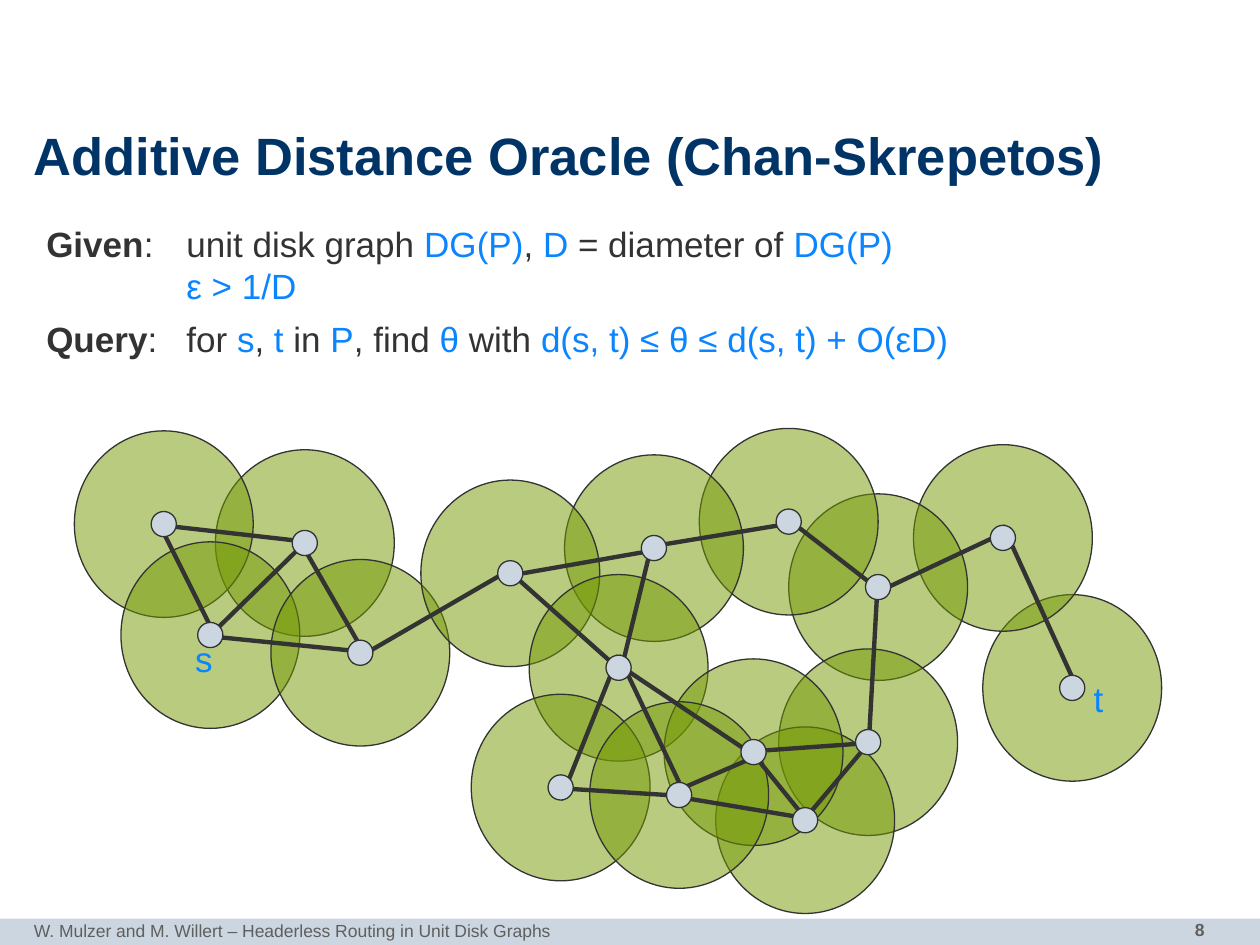
from dataclasses import dataclass

from lxml import etree
from pptx import Presentation
from pptx import util as u
from pptx.dml import color
from pptx.enum import shapes, text
from pptx.oxml import ns

NAVY, INK, BLUE = "003366", "333333", "0A85FF"
GREY, PALE, GREEN = "5F5F5F", "CCD6E0", "739900"
DISK_WIDTH, DISK_HEIGHT, NODE_SIZE = 102.2, 106.6, 14.4
DIAGONAL = 0.5 ** 0.5
SITES = {
    "N": (0, -1), "NE": (DIAGONAL, -DIAGONAL), "E": (1, 0), "SE": (DIAGONAL, DIAGONAL),
    "S": (0, 1), "SW": (-DIAGONAL, DIAGONAL), "W": (-1, 0), "NW": (-DIAGONAL, -DIAGONAL),
}


@dataclass
class Span:
    text: str
    color: str = INK
    bold: bool = False


@dataclass
class Label:
    left: float
    top: float
    width: float
    height: float
    lines: list[list[Span]]
    size: float = 20
    margins: tuple[float, float] = (7.2, 3.6)
    anchor: text.MSO_ANCHOR = text.MSO_ANCHOR.TOP
    align: text.PP_ALIGN = text.PP_ALIGN.LEFT
    spacing: float = 1.0
    grow: bool = True


@dataclass
class Node:
    x: float
    y: float


@dataclass
class Edge:
    start: str
    start_site: str
    end: str
    end_site: str


NODES = {
    "t": Node(612.7, 393.1), "i": Node(573.1, 307.4), "h": Node(501.8, 335.5),
    "g": Node(450.7, 298.1), "f": Node(373.7, 313.2), "b": Node(174.2, 310.3),
    "a": Node(93.6, 299.5), "s": Node(120.2, 362.9), "d": Node(205.9, 373),
    "e": Node(291.6, 327.6), "j": Node(353.5, 381.6), "k": Node(320.4, 450),
    "n": Node(496.1, 424.1), "o": Node(460.1, 468.7), "m": Node(430.6, 429.8),
    "l": Node(388.1, 454.3),
}
EDGES = [
    Edge("o", "E", "l", "W"), Edge("h", "N", "n", "S"), Edge("n", "NE", "o", "SW"),
    Edge("o", "SE", "m", "NW"), Edge("n", "E", "m", "W"), Edge("l", "W", "m", "E"),
    Edge("m", "SE", "j", "NW"), Edge("l", "N", "j", "N"), Edge("l", "W", "k", "W"),
    Edge("k", "S", "j", "N"), Edge("i", "N", "t", "SE"), Edge("i", "NE", "h", "SW"),
    Edge("h", "SE", "g", "NW"), Edge("f", "W", "g", "E"), Edge("f", "N", "j", "S"),
    Edge("f", "E", "e", "E"), Edge("e", "NW", "j", "SE"), Edge("e", "NE", "d", "SW"),
    Edge("d", "SE", "b", "NW"), Edge("s", "SW", "b", "NE"), Edge("d", "E", "s", "W"),
    Edge("s", "SE", "a", "NW"), Edge("b", "E", "a", "W"),
]
HEADINGS = [
    Label(19.4, 74.2, 680.4, 33.8,
          [[Span("Additive Distance Oracle (Chan-Skrepetos)", NAVY, True)]],
          size=30, margins=(0, 0), anchor=text.MSO_ANCHOR.MIDDLE, spacing=0.85, grow=False),
    Label(19.4, 522, 479.5, 18,
          [[Span("W. Mulzer and M. Willert – Headerless Routing in Unit Disk Graphs", GREY)]],
          size=10, margins=(0, 3.6), grow=False),
    Label(599, 522, 96.5, 18.7, [[Span("8", GREY, True)]], size=10,
          anchor=text.MSO_ANCHOR.MIDDLE, align=text.PP_ALIGN.RIGHT, grow=False),
    Label(19.4, 123.8, 79.2, 31.7, [[Span("Given", bold=True), Span(":")]]),
    Label(99.4, 123.8, 428.4, 55.4, [
        [Span("unit disk graph "), Span("DG(P)", BLUE), Span(", "), Span("D", BLUE),
         Span(" = diameter of "), Span("DG(P)", BLUE)],
        [Span("ε > 1/D", BLUE)],
    ]),
]
QUERY_LABELS = [
    Label(19.4, 177.8, 79.2, 31.7, [[Span("Query", bold=True), Span(":")]]),
    Label(99.4, 177.8, 454.3, 31.7, [[
        Span("for "), Span("s", BLUE), Span(","), Span(" t ", BLUE), Span("in"),
        Span(" P", BLUE), Span(", find "), Span("θ", BLUE), Span(" with "),
        Span("d(s, t) ≤ θ ≤ d(s, t) + O(εD)", BLUE),
    ]]),
    Label(104.4, 360.7, 26.6, 31.7, [[Span("s", BLUE)]]),
    Label(617.8, 383.8, 26.6, 31.7, [[Span("t", BLUE)]]),
]


def set_color(target, value: str) -> None:
    target.rgb = color.RGBColor.from_string(value)


def set_values(target, values: dict) -> None:
    for name, value in values.items():
        setattr(target, name, value)


def add_label(page, label: Label) -> None:
    box = page.shapes.add_textbox(
        *map(u.Pt, (label.left, label.top, label.width, label.height)))
    side, edge = map(u.Pt, label.margins)
    fit = text.MSO_AUTO_SIZE
    set_values(box.text_frame, {
        "word_wrap": True, "vertical_anchor": label.anchor,
        "auto_size": fit.SHAPE_TO_FIT_TEXT if label.grow else fit.NONE,
        "margin_left": side, "margin_right": side, "margin_top": edge, "margin_bottom": edge,
    })
    para = box.text_frame.paragraphs[0]
    set_values(para, {"alignment": label.align, "line_spacing": label.spacing})
    for number, line in enumerate(label.lines):
        if number:
            para.add_line_break()
        for span in line:
            run = para.add_run()
            run.text = span.text
            set_values(run.font, {"name": "Arial", "size": u.Pt(label.size), "bold": span.bold})
            set_color(run.font.color, span.color)


def add_filled(page, kind: shapes.MSO_SHAPE, left: float, top: float,
               width: float, height: float, fill: str):
    shape = page.shapes.add_shape(kind, *map(u.Pt, (left, top, width, height)))
    shape.shadow.inherit = False
    shape.fill.solid()
    set_color(shape.fill.fore_color, fill)
    shape.line.fill.background()
    return shape


def add_circle(page, node: Node, width: float, height: float, fill: str):
    circle = add_filled(page, shapes.MSO_SHAPE.OVAL, node.x - width / 2,
                        node.y - height / 2, width, height, fill)
    circle.line.fill.solid()
    set_color(circle.line.color, INK)
    circle.line.width = u.Pt(0.75)
    return circle


def add_disk(page, node: Node) -> None:
    disk = add_circle(page, node, DISK_WIDTH, DISK_HEIGHT, GREEN)
    tint = disk.fill._xPr.find(".//" + ns.qn("a:srgbClr"))
    etree.SubElement(tint, ns.qn("a:alpha")).set("val", "50000")


def site_point(name: str, site: str) -> tuple[u.Length, u.Length]:
    across, down = SITES[site]
    node, radius = NODES[name], NODE_SIZE / 2
    return u.Pt(node.x + across * radius), u.Pt(node.y + down * radius)


def add_edge(page, edge: Edge) -> None:
    line = page.shapes.add_connector(
        shapes.MSO_CONNECTOR.STRAIGHT,
        *site_point(edge.start, edge.start_site), *site_point(edge.end, edge.end_site))
    set_color(line.line.color, INK)
    line.line.width = u.Pt(2.5)
    etree.SubElement(line._element.spPr, ns.qn("a:effectLst"))


def main() -> None:
    deck = Presentation()
    set_values(deck, {"slide_width": u.Pt(720), "slide_height": u.Pt(540)})
    page = deck.slides.add_slide(deck.slide_layouts[6])
    add_filled(page, shapes.MSO_SHAPE.RECTANGLE, 0, 524.9, 720, 15.1, PALE)
    for label in HEADINGS:
        add_label(page, label)
    for node in NODES.values():
        add_disk(page, node)
    for edge in EDGES:
        add_edge(page, edge)
    for node in NODES.values():
        add_circle(page, node, NODE_SIZE, NODE_SIZE, PALE)
    for label in QUERY_LABELS:
        add_label(page, label)
    deck.save("out.pptx")


if __name__ == "__main__":
    main()
